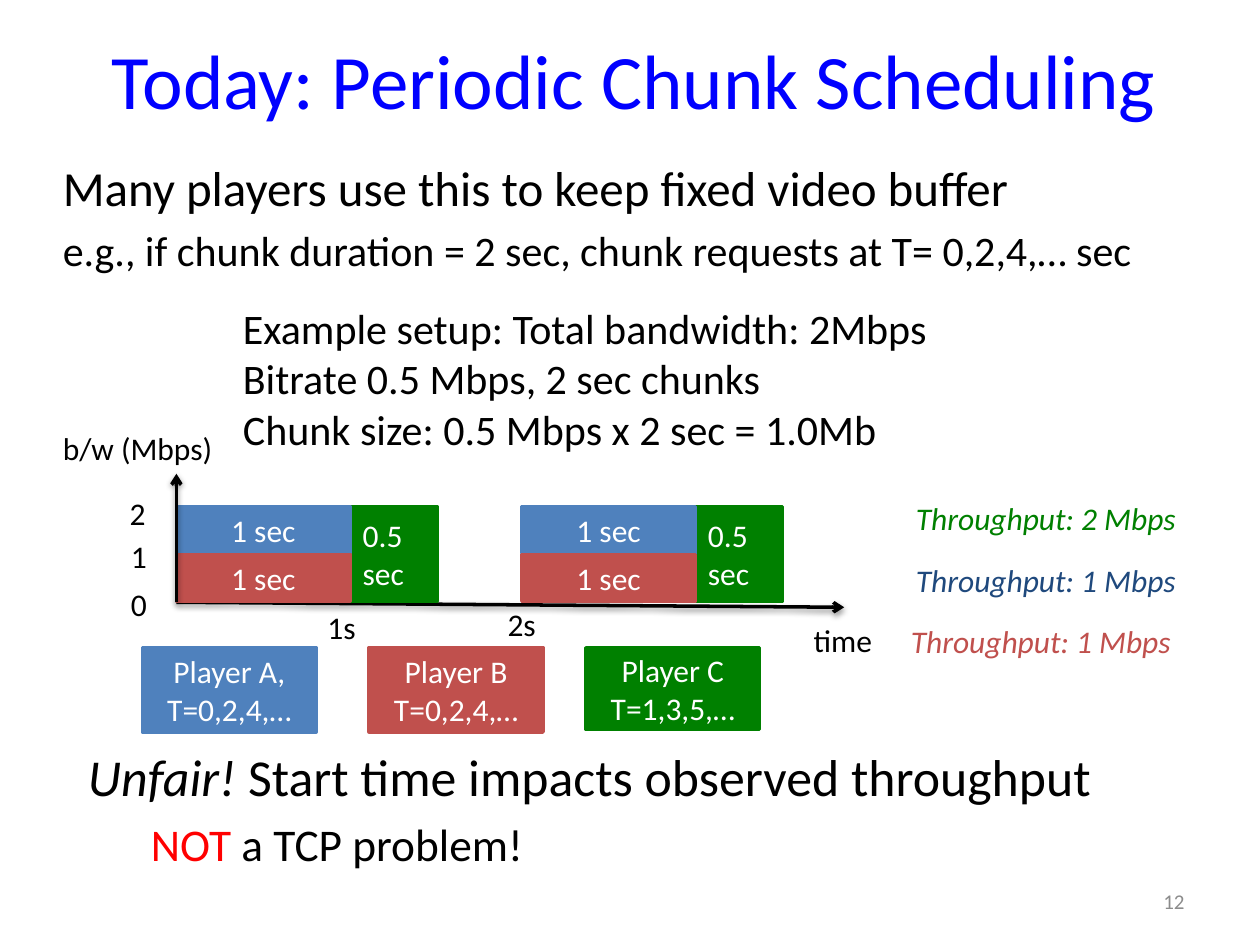
"""Build the slide on periodic chunk scheduling."""
import dataclasses
import typing

import lxml.etree
import pptx
import pptx.dml.color
import pptx.enum.shapes
import pptx.enum.text
import pptx.oxml.ns
import pptx.util

Inches = pptx.util.Inches
Align = pptx.enum.text.PP_ALIGN
Anchor = pptx.enum.text.MSO_ANCHOR
Fit = pptx.enum.text.MSO_AUTO_SIZE
BLACK, WHITE, GREY, PURE, ALERT = "000000", "FFFFFF", "8C8C8C", "0000FF", "FF0000"
BLUE, RED, GREEN, NAVY = "4F81BD", "C0504D", "008000", "1F497D"
WIDE = 1.38


@dataclasses.dataclass
class Run:
    """Hold a piece of text and its format."""
    text: str
    size: float = 18
    color: str = BLACK
    italic: bool = False


@dataclasses.dataclass
class Line:
    """Hold a paragraph."""
    runs: list[Run]
    format: dict[str, typing.Any] = dataclasses.field(default_factory=dict)


@dataclasses.dataclass
class Block:
    """Hold a filled box."""
    left: float
    top: float
    width: float
    height: float
    fill: str
    texts: tuple[str, ...]
    align: Align = Align.CENTER


@dataclasses.dataclass
class Label:
    """Hold a short text that does not wrap."""
    left: float
    top: float
    width: float
    text: str
    color: str = BLACK
    italic: bool = False


def shade(code: str) -> pptx.dml.color.RGBColor:
    """Turn a hex string into a colour."""
    return pptx.dml.color.RGBColor.from_string(code)


def apply(target: typing.Any, values: dict[str, typing.Any]) -> None:
    """Set each value on the target."""
    for name, value in values.items():
        setattr(target, name, value)


def write(frame: typing.Any, lines: list[Line], **values: typing.Any) -> None:
    """Fill a text frame with lines."""
    apply(frame, {"word_wrap": True, **values})
    for place, line in enumerate(lines):
        para = frame.add_paragraph() if place else frame.paragraphs[0]
        apply(para, line.format)
        for run in line.runs:
            part = para.add_run()
            part.text = run.text
            apply(part.font, {"name": "Calibri", "size": pptx.util.Pt(run.size),
                              "italic": run.italic})
            part.font.color.rgb = shade(run.color)


def add_text(slide: typing.Any, at: tuple[float, ...], lines: list[Line],
             **values: typing.Any) -> None:
    """Add a text box."""
    box = slide.shapes.add_textbox(*map(Inches, at))
    write(box.text_frame, lines, **values)


def add_label(slide: typing.Any, label: Label) -> None:
    """Add a label."""
    run = Run(label.text, color=label.color, italic=label.italic)
    add_text(slide, (label.left, label.top, label.width, 0.4), [Line([run])],
             word_wrap=False, auto_size=Fit.SHAPE_TO_FIT_TEXT)


def add_block(slide: typing.Any, block: Block) -> None:
    """Add a filled box with its text."""
    at = block.left, block.top, block.width, block.height
    shape = slide.shapes.add_shape(
        pptx.enum.shapes.MSO_SHAPE.RECTANGLE, *map(Inches, at))
    shape.shadow.inherit = False
    shape.fill.solid()
    shape.fill.fore_color.rgb = shade(block.fill)
    shape.line.color.rgb = shade(block.fill)
    shape.line.width = pptx.util.Pt(2)
    lines = [Line([Run(text, color=WHITE)], {"alignment": block.align})
             for text in block.texts]
    write(shape.text_frame, lines, vertical_anchor=Anchor.MIDDLE)


def add_axis(slide: typing.Any, right: float, low: float) -> None:
    """Add an arrow from the chart's zero point."""
    axis = slide.shapes.add_connector(
        pptx.enum.shapes.MSO_CONNECTOR.STRAIGHT,
        *map(Inches, (1.4, 4.78, right, low)))
    axis.line.color.rgb = shade(BLACK)
    axis.line.width = pptx.util.Pt(2)
    name = pptx.oxml.ns.qn
    make = lxml.etree.SubElement
    make(axis.line._get_or_add_ln(), name("a:tailEnd"), type="arrow")
    group = make(axis._element.spPr, name("a:effectLst"))
    cast = make(group, name("a:outerShdw"), blurRad="40000", dist="20000",
                dir="5400000", rotWithShape="0")
    tint = make(cast, name("a:srgbClr"), val=BLACK)
    make(tint, name("a:alpha"), val="38000")


def add_cycle(slide: typing.Any, left: float) -> None:
    """Add the three chunks of one cycle."""
    tail = Block(left + WIDE, 4.02, 0.69, 0.75, GREEN, ("0.5 sec",), Align.LEFT)
    add_block(slide, tail)
    for top, fill in ((4.02, BLUE), (4.4, RED)):
        add_block(slide, Block(left, top, WIDE, 0.37, fill, ("1 sec",)))


def gap(size: float) -> dict[str, typing.Any]:
    """Give the space before a line of this size."""
    return {"space_before": pptx.util.Pt(round(size / 5, 1))}


def main() -> None:
    """Draw and save the slide."""
    deck = pptx.Presentation()
    apply(deck, {"slide_width": Inches(10), "slide_height": Inches(7.5)})
    slide = deck.slides.add_slide(deck.slide_layouts[6])

    add_text(slide, (0.11, 0, 9.85, 1.25),
             [Line([Run("Today: Periodic Chunk Scheduling", 44, PURE)],
                   {"alignment": Align.CENTER})], vertical_anchor=Anchor.MIDDLE)
    points = (("Many players use this to keep fixed video buffer", 28),
              ("e.g., if chunk duration = 2 sec, chunk requests at T= 0,2,4,… sec", 24))
    add_text(slide, (0.4, 1.2, 9.71, 0.88),
             [Line([Run(text, size)], gap(size)) for text, size in points])
    add_text(slide, (7.17, 6.95, 2.33, 0.4),
             [Line([Run("12", 12, GREY)], {"alignment": Align.RIGHT})],
             vertical_anchor=Anchor.MIDDLE)
    setup = ("Example setup: Total bandwidth: 2Mbps",
             "Bitrate 0.5 Mbps, 2 sec chunks",
             "Chunk size: 0.5 Mbps x 2 sec = 1.0Mb")
    add_text(slide, (1.83, 2.35, 5.76, 1.31),
             [Line([Run(text, 24)]) for text in setup],
             word_wrap=False, auto_size=Fit.SHAPE_TO_FIT_TEXT)

    add_axis(slide, 6.7, 4.82)
    for left in (1.4, 4.14):
        add_cycle(slide, left)
    add_axis(slide, 1.4, 3.76)

    for block in (
            Block(1.13, 5.14, WIDE, 0.67, BLUE, ("Player A, T=0,2,4,…",)),
            Block(2.93, 5.14, WIDE, 0.67, RED, ("Player B", "T=0,2,4,…")),
            Block(4.65, 5.14, WIDE, 0.65, GREEN, ("Player C", "T=1,3,5,…"))):
        add_block(slide, block)

    for label in (
            Label(0.4, 3.36, 1.4, "b/w (Mbps)"),
            Label(0.93, 3.87, 0.33, "2"),
            Label(0.94, 4.21, 0.33, "1"),
            Label(0.94, 4.59, 0.33, "0"),
            Label(2.5, 4.78, 0.43, "1s"),
            Label(3.93, 4.75, 0.43, "2s"),
            Label(6.36, 4.88, 0.67, "time"),
            Label(7.17, 3.91, 2.35, "Throughput: 2 Mbps", GREEN, True),
            Label(7.17, 4.4, 2.35, "Throughput: 1 Mbps", NAVY, True),
            Label(7.13, 4.89, 2.35, "Throughput: 1 Mbps", RED, True)):
        add_label(slide, label)

    claim = Line([Run("Unfair! ", 29.6, italic=True),
                  Run("Start time impacts observed throughput", 29.6)], gap(29.6))
    note = Line([Run("NOT", 25.9, ALERT), Run(" a TCP problem!", 25.9)],
                {"level": 1, **gap(25.9)})
    add_text(slide, (0.6, 5.86, 8.67, 1.22), [claim, note])
    inset = slide.shapes[-1].text_frame.paragraphs[1]._p.get_or_add_pPr()
    inset.set("marL", str(Inches(0.5)))
    inset.set("indent", "0")
    deck.save("out.pptx")


if __name__ == "__main__":
    main()
